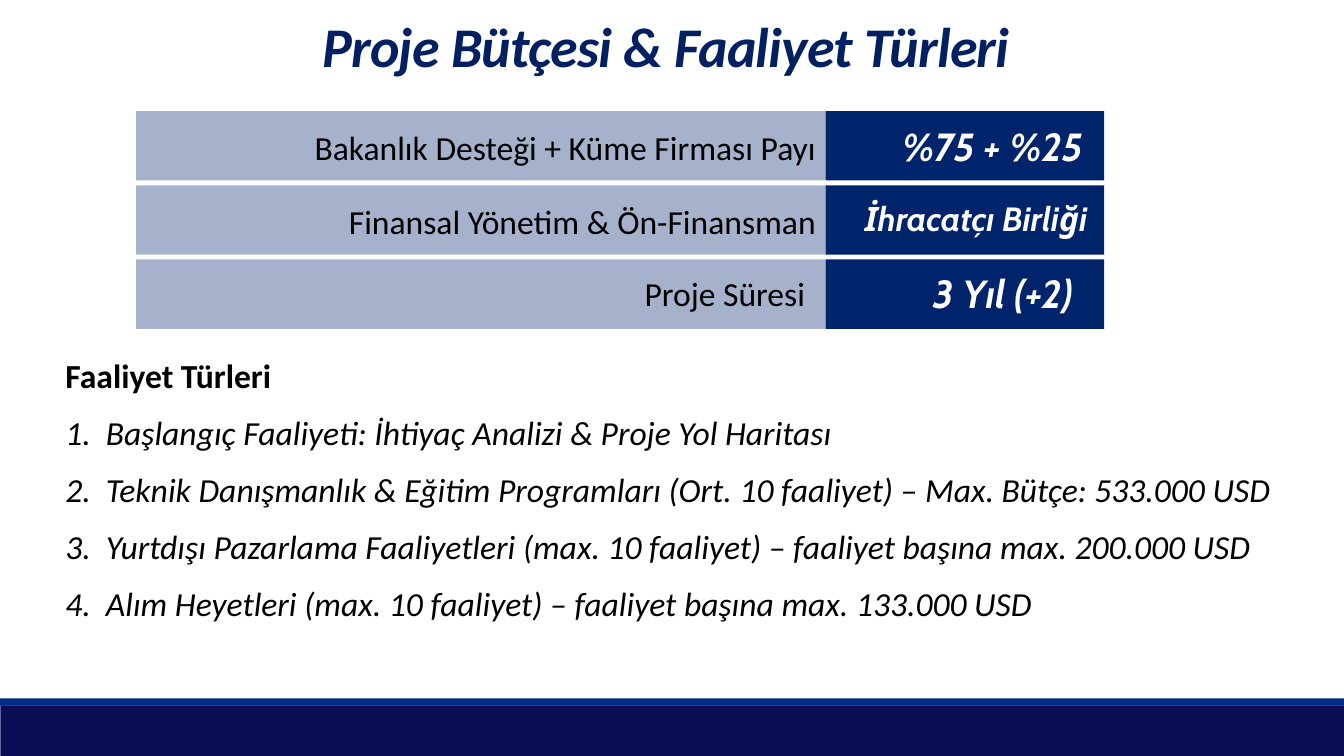
import pptx
import pptx.util
import pptx.dml.color
import pptx.enum.shapes
import pptx.enum.text
import pptx.oxml.ns
import lxml.etree

Cm = pptx.util.Cm
Pt = pptx.util.Pt
ALIGN = pptx.enum.text.PP_ALIGN
ANCHOR = pptx.enum.text.MSO_ANCHOR

COLOURS = {
    "navy": "00246C", "title": "002062", "footer": "0B0D55", "stripe": "002B82",
    "edge": "5A68A0", "white": "FFFFFF", "black": "000000",
}
SLIDE_WIDTH, SLIDE_HEIGHT = 33.87, 19.05

# label, value, value size, gaps right of label and value, drops of label and value
BUDGET_ROWS = [
    ("Bakanlık Desteği + Küme Firması Payı", "%75 + %25", 28, 0, 0.3, 0.28, 0.15),
    ("Finansal Yönetim & Ön-Finansman", "İhracatçı Birliği", 24, 0, 0.18, 0.26, 0.18),
    ("Proje Süresi ", "3 Yıl (+2) ", 28, 0.08, 0.33, 0.2, 0.13),
]
ACTIVITIES = [
    "Başlangıç Faaliyeti: İhtiyaç Analizi & Proje Yol Haritası",
    "Teknik Danışmanlık & Eğitim Programları (Ort. 10 faaliyet) – Max. Bütçe: 533.000 USD",
    "Yurtdışı Pazarlama Faaliyetleri (max. 10 faaliyet) – faaliyet başına max. 200.000 USD",
    "Alım Heyetleri (max. 10 faaliyet) – faaliyet başına max. 133.000 USD",
]


def colour(name):
    return pptx.dml.color.RGBColor.from_string(COLOURS[name])


def add_block(page, left, top, width, height, fill, opacity=100, edge=None):
    block = page.shapes.add_shape(pptx.enum.shapes.MSO_SHAPE.RECTANGLE,
                                  Cm(left), Cm(top), Cm(width), Cm(height))
    block.shadow.inherit = False
    block.fill.solid()
    block.fill.fore_color.rgb = colour(fill)
    if opacity < 100:
        tint = block.fill._xPr.find(".//" + pptx.oxml.ns.qn("a:srgbClr"))
        alpha = lxml.etree.SubElement(tint, pptx.oxml.ns.qn("a:alpha"))
        alpha.set("val", str(opacity * 1000))
    if edge:
        block.line.color.rgb = colour(edge)
        block.line.width = Pt(0.5)
    else:
        block.line.fill.background()


def add_frame(page, left, top, width, height, grow=True):
    box = page.shapes.add_textbox(Cm(left), Cm(top), Cm(width), Cm(height))
    frame = box.text_frame
    frame.word_wrap = True
    if grow:
        frame.auto_size = pptx.enum.text.MSO_AUTO_SIZE.SHAPE_TO_FIT_TEXT
    return frame


def add_span(para, text, size, ink="black", font="Calibri", bold=False, italic=False):
    span = para.add_run()
    span.text = text
    span.font.name = font
    span.font.size = Pt(size)
    span.font.bold = bold
    span.font.italic = italic
    span.font.color.rgb = colour(ink)
    return span


def number_para(para, indent):
    props = para._p.get_or_add_pPr()
    props.set("marL", str(Cm(indent)))
    props.set("indent", str(-Cm(indent)))
    bullet = lxml.etree.SubElement(props, pptx.oxml.ns.qn("a:buAutoNum"))
    bullet.set("type", "arabicPeriod")


def draw_footer(page, left, top, width, height):
    stripe = 0.18
    add_block(page, left, top + stripe, width, height - stripe, "footer", edge="edge")
    add_block(page, left, top, width, stripe, "stripe")


def draw_title(page, left, top, width, height):
    frame = add_frame(page, left, top, width, height, grow=False)
    frame.vertical_anchor = ANCHOR.BOTTOM
    para = frame.paragraphs[0]
    para.alignment = ALIGN.CENTER
    para.line_spacing = 0.85
    span = add_span(para, "Proje Bütçesi & Faaliyet Türleri ", 40, "title",
                    bold=True, italic=True)
    span.font._element.set("spc", "-50")


def draw_budget(page, left, top, width, height):
    gap = 0.12
    row_height = (height - gap * (len(BUDGET_ROWS) - 1)) / len(BUDGET_ROWS)
    value_width = 7.02
    label_width = width - value_width
    value_left = left + label_width
    for index, row in enumerate(BUDGET_ROWS):
        label, value, size, label_gap, value_gap, label_drop, value_drop = row
        row_top = top + index * (row_height + gap)
        # Value cell
        add_block(page, value_left, row_top, value_width, row_height, "navy")
        frame = add_frame(page, value_left, row_top + value_drop,
                          value_width - value_gap, 1.3)
        frame.paragraphs[0].alignment = ALIGN.RIGHT
        add_span(frame.paragraphs[0], value, size, "white", "Cabin", True, True)
        # Label cell
        add_block(page, left, row_top, label_width, row_height, "navy", opacity=35)
        frame = add_frame(page, left, row_top + label_drop,
                          label_width - label_gap, 1.28)
        frame.paragraphs[0].alignment = ALIGN.RIGHT
        add_span(frame.paragraphs[0], label, 24)


def draw_activities(page, left, top, width, height):
    frame = add_frame(page, left, top, width, height)
    add_span(frame.paragraphs[0], "Faaliyet Türleri", 24, bold=True)
    for activity in ACTIVITIES:
        para = frame.add_paragraph()
        add_span(para, activity, 24, italic=True)
    for index, para in enumerate(frame.paragraphs):
        para.space_before = Pt(6)
        para.space_after = Pt(6)
        if index:
            number_para(para, 1.02)


def main():
    deck = pptx.Presentation()
    deck.slide_width = Cm(SLIDE_WIDTH)
    deck.slide_height = Cm(SLIDE_HEIGHT)
    page = deck.slides.add_slide(deck.slide_layouts[6])
    draw_footer(page, 0, 17.6, SLIDE_WIDTH, SLIDE_HEIGHT - 17.6)
    draw_budget(page, 3.43, 2.8, 24.4, 5.49)
    draw_activities(page, 1.4, 8.81, 31.06, 7.09)
    draw_title(page, 0, -0.05, SLIDE_WIDTH, 2.16)
    deck.save("out.pptx")


if __name__ == "__main__":
    main()
